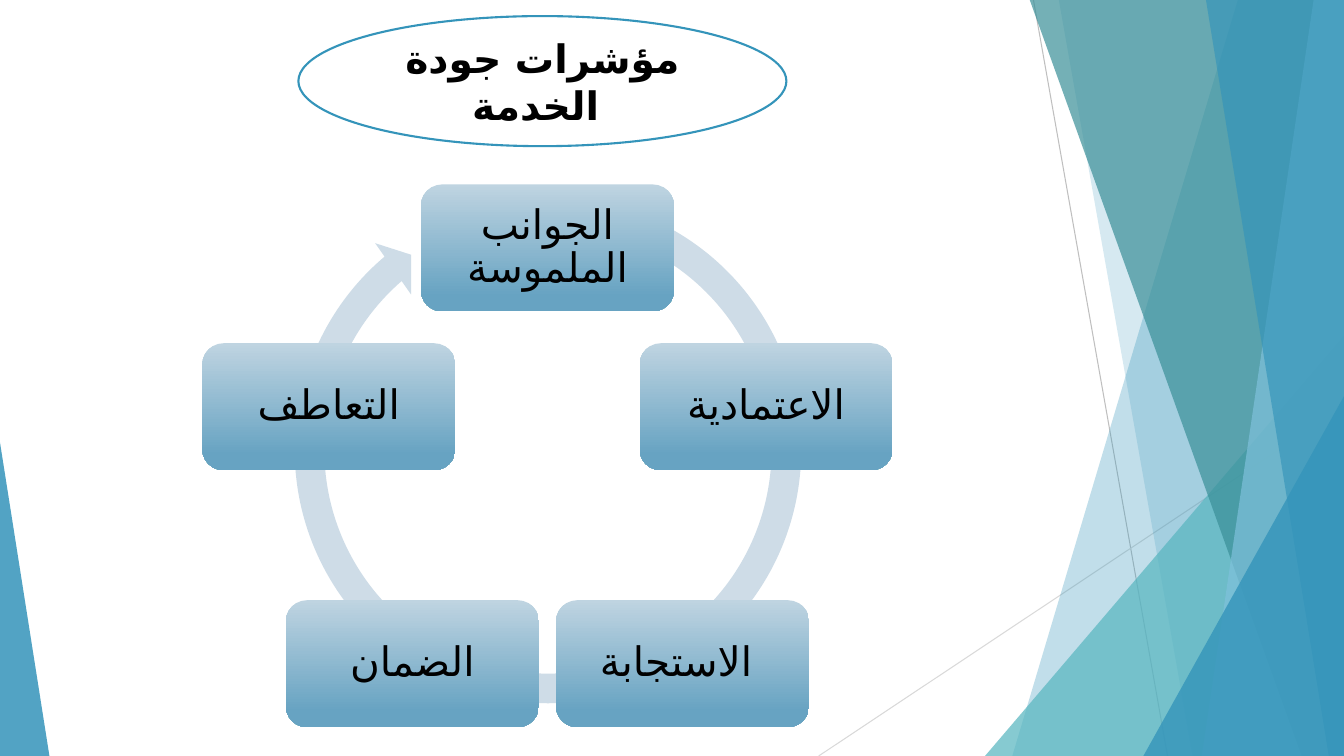
import math
from dataclasses import dataclass

import pptx
import pptx.dml.color
import pptx.enum.shapes
import pptx.enum.text
import pptx.oxml.ns
import pptx.util
from lxml import etree

Inches = pptx.util.Inches
Shape = pptx.enum.shapes.MSO_SHAPE
qn = pptx.oxml.ns.qn

WIDTH, HEIGHT, TOP = 13.33, 7.5, -0.01
COLORS = {
    "white": "FFFFFF", "black": "000000", "blue": "3494BA", "sky": "7FC1DB",
    "aqua": "58B6C0", "teal": "3A8F98", "ring": "CEDCE7",
    "box_top": "BFD4E1", "box_bottom": "67A3C2",
    "line_dark": "BFBFBF", "line_light": "D9D9D9",
}
FRAME_FORMAT = {"word_wrap": True, "vertical_anchor": pptx.enum.text.MSO_ANCHOR.MIDDLE}
BOX_FRAME = FRAME_FORMAT | {
    f"margin_{side}": Inches(0.12) for side in ("left", "right", "top", "bottom")}
TITLE_FONT = {"name": "Lato", "size": pptx.util.Pt(28), "bold": True}
BOX_FONT = {"name": "Lato", "size": pptx.util.Pt(29), "bold": False}
ARABIC_FONT = "DejaVu Sans"  # Lato has no Arabic letters


@dataclass
class Ray:
    start: tuple[float, float]
    end: tuple[float, float]
    color: str


@dataclass
class Band:
    """A strip reaching the right edge, slanted on its left side."""
    top_x: float
    bottom_x: float
    color: str
    opacity: int


@dataclass
class Wedge:
    """A right triangle standing on the bottom edge."""
    left: float
    top: float
    width: float
    tip: float
    color: str
    opacity: int


@dataclass
class Indicator:
    label: str
    rtl: bool = False


RAYS = [
    Ray((10.25, 0), (11.58, HEIGHT), "line_dark"),
    Ray((WIDTH, 4.03), (8.12, HEIGHT), "line_light"),
]
FACETS = [
    Band(12.28, 10.04, "blue", 30),
    Band(10.5, 11.83, "blue", 20),
    Wedge(9.77, 3.33, 3.56, 1, "aqua", 72),
    Band(10.21, 12.91, "teal", 70),
    Band(13.03, 11.92, "sky", 70),
    Band(11.96, 13.18, "blue", 65),
    Wedge(11.34, 3.93, 1.99, 1, "blue", 80),
    Wedge(0, 4.39, 0.49, 0, "blue", 85),
]
# Clockwise from the top
INDICATORS = [
    Indicator("الجوانب الملموسة"),
    Indicator("الاعتمادية", rtl=True),
    Indicator("الاستجابة "),
    Indicator("الضمان", rtl=True),
    Indicator("التعاطف"),
]
CYCLE_X, CYCLE_Y, CYCLE_RADIUS = 5.43, 4.74, 2.28
BOX_WIDTH, BOX_HEIGHT = 2.51, 1.26


def rgb(name: str) -> pptx.dml.color.RGBColor:
    return pptx.dml.color.RGBColor.from_string(COLORS[name])


def apply_format(target, values: dict) -> None:
    for attribute, value in values.items():
        setattr(target, attribute, value)


def paint(shape, color: str, opacity: int = 100) -> None:
    shape.shadow.inherit = False
    shape.fill.solid()
    shape.fill.fore_color.rgb = rgb(color)
    shape.line.fill.background()
    if opacity < 100:
        tint = shape.fill._xPr.find(f".//{qn('a:srgbClr')}")
        etree.SubElement(tint, qn("a:alpha"), val=str(opacity * 1000))


def add_preset(shapes, kind, left: float, top: float, width: float, height: float):
    return shapes.add_shape(kind, Inches(left), Inches(top), Inches(width), Inches(height))


def write(shape, text: str, frame_format: dict, font_format: dict):
    frame = shape.text_frame
    apply_format(frame, frame_format)
    paragraph = frame.paragraphs[0]
    paragraph.alignment = pptx.enum.text.PP_ALIGN.CENTER
    run = paragraph.add_run()
    run.text = text
    apply_format(run.font, font_format)
    run.font.color.rgb = rgb("black")
    etree.SubElement(run.font._element, qn("a:cs"), typeface=ARABIC_FONT)
    return paragraph


def draw_ray(shapes, ray: Ray) -> None:
    ends = [Inches(value) for value in ray.start + ray.end]
    connector = shapes.add_connector(pptx.enum.shapes.MSO_CONNECTOR.STRAIGHT, *ends)
    connector.line.color.rgb = rgb(ray.color)
    connector.line.width = pptx.util.Pt(0.75)
    etree.SubElement(connector._element.spPr, qn("a:effectLst"))


def draw_facet(shapes, facet: Band | Wedge) -> None:
    if isinstance(facet, Band):
        corners = [(facet.top_x, TOP), (WIDTH, TOP), (WIDTH, HEIGHT), (facet.bottom_x, HEIGHT)]
        points = [(Inches(x), Inches(y)) for x, y in corners]
        outline = shapes.build_freeform(*points[0])
        outline.add_line_segments(points[1:], close=True)
        shape = outline.convert_to_shape()
    else:
        shape = add_preset(shapes, Shape.ISOSCELES_TRIANGLE, facet.left, facet.top,
                           facet.width, HEIGHT - facet.top)
        shape.adjustments[0] = facet.tip
    paint(shape, facet.color, facet.opacity)


def draw_title(shapes) -> None:
    title = add_preset(shapes, Shape.OVAL, 2.96, 0.16, 4.84, 1.29)
    paint(title, "white")
    title.line.color.rgb = rgb("blue")
    title.line.width = pptx.util.Pt(1.5)
    write(title, "مؤشرات جودة الخدمة ", FRAME_FORMAT, TITLE_FONT)


def draw_ring(shapes) -> None:
    ring = add_preset(shapes, Shape.CIRCULAR_ARROW, 2.76, 1.79, 5.35, 5.35)
    for index, value in enumerate((0.055, 3.307, 137.698, 173.897, 0.058)):
        ring.adjustments[index] = value
    paint(ring, "ring")


def draw_indicator(shapes, indicator: Indicator, angle: float) -> None:
    left = CYCLE_X + CYCLE_RADIUS * math.sin(angle) - BOX_WIDTH / 2
    top = CYCLE_Y - CYCLE_RADIUS * math.cos(angle) - BOX_HEIGHT / 2
    box = add_preset(shapes, Shape.ROUNDED_RECTANGLE, left, top, BOX_WIDTH, BOX_HEIGHT)
    paint(box, "box_top")
    box.fill.gradient()
    box.fill.gradient_angle = 270
    for stop, (color, position) in zip(box.fill.gradient_stops,
                                       (("box_top", 0), ("box_bottom", 0.88))):
        stop.color.rgb = rgb(color)
        stop.position = position
    paragraph = write(box, indicator.label, BOX_FRAME, BOX_FONT)
    paragraph.line_spacing = 0.9
    properties = paragraph._p.get_or_add_pPr()
    space_after = etree.SubElement(properties, qn("a:spcAft"))
    etree.SubElement(space_after, qn("a:spcPct"), val="35000")
    if indicator.rtl:
        properties.set("rtl", "1")


def main() -> None:
    deck = pptx.Presentation()
    deck.slide_width, deck.slide_height = Inches(WIDTH), Inches(HEIGHT)
    shapes = deck.slides.add_slide(deck.slide_layouts[6]).shapes

    # Decorative facets
    for ray in RAYS:
        draw_ray(shapes, ray)
    for facet in FACETS:
        draw_facet(shapes, facet)

    # Title and cycle of indicators
    draw_title(shapes)
    draw_ring(shapes)
    for index, indicator in enumerate(INDICATORS):
        draw_indicator(shapes, indicator, index * math.tau / len(INDICATORS))

    deck.save("out.pptx")


if __name__ == "__main__":
    main()
